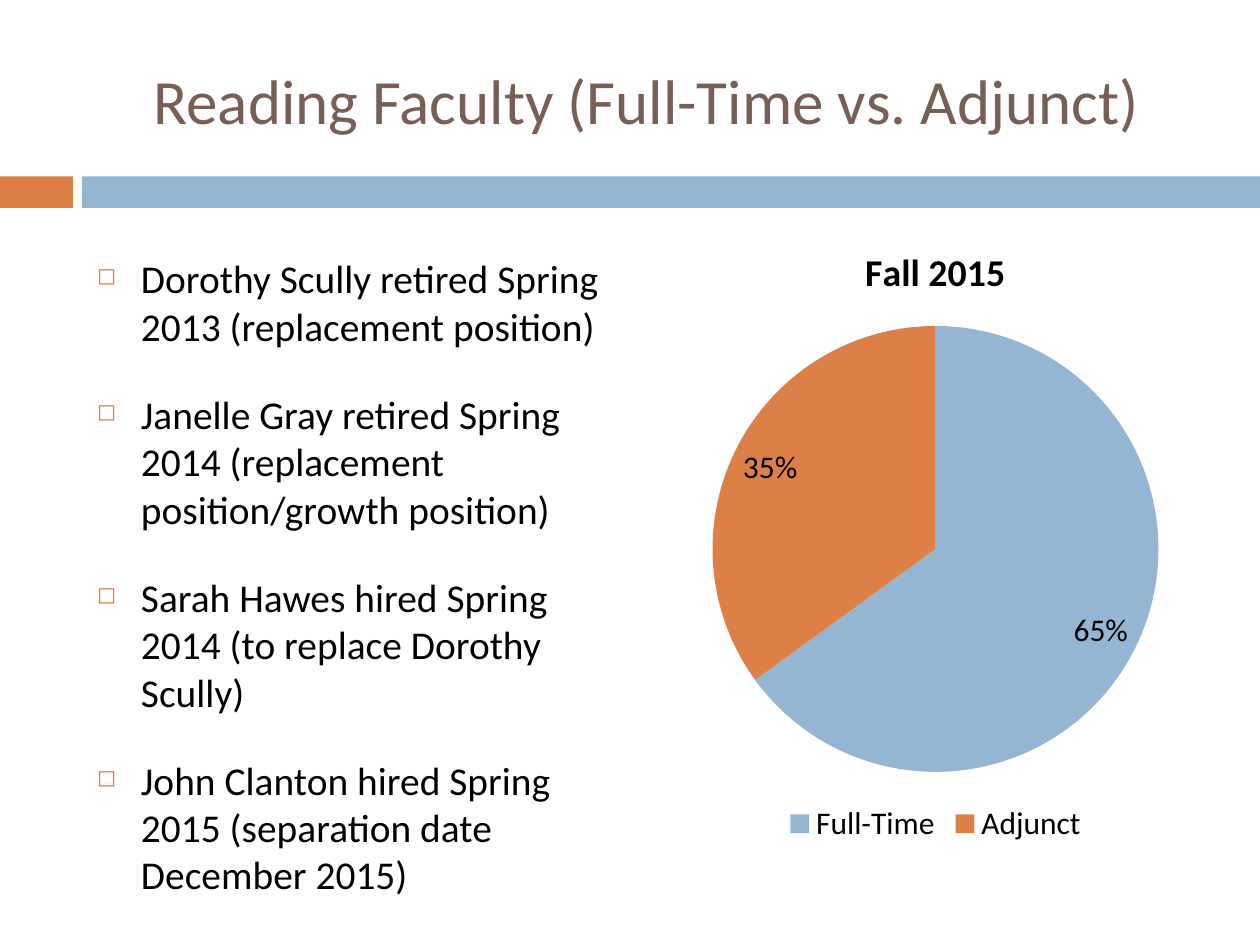
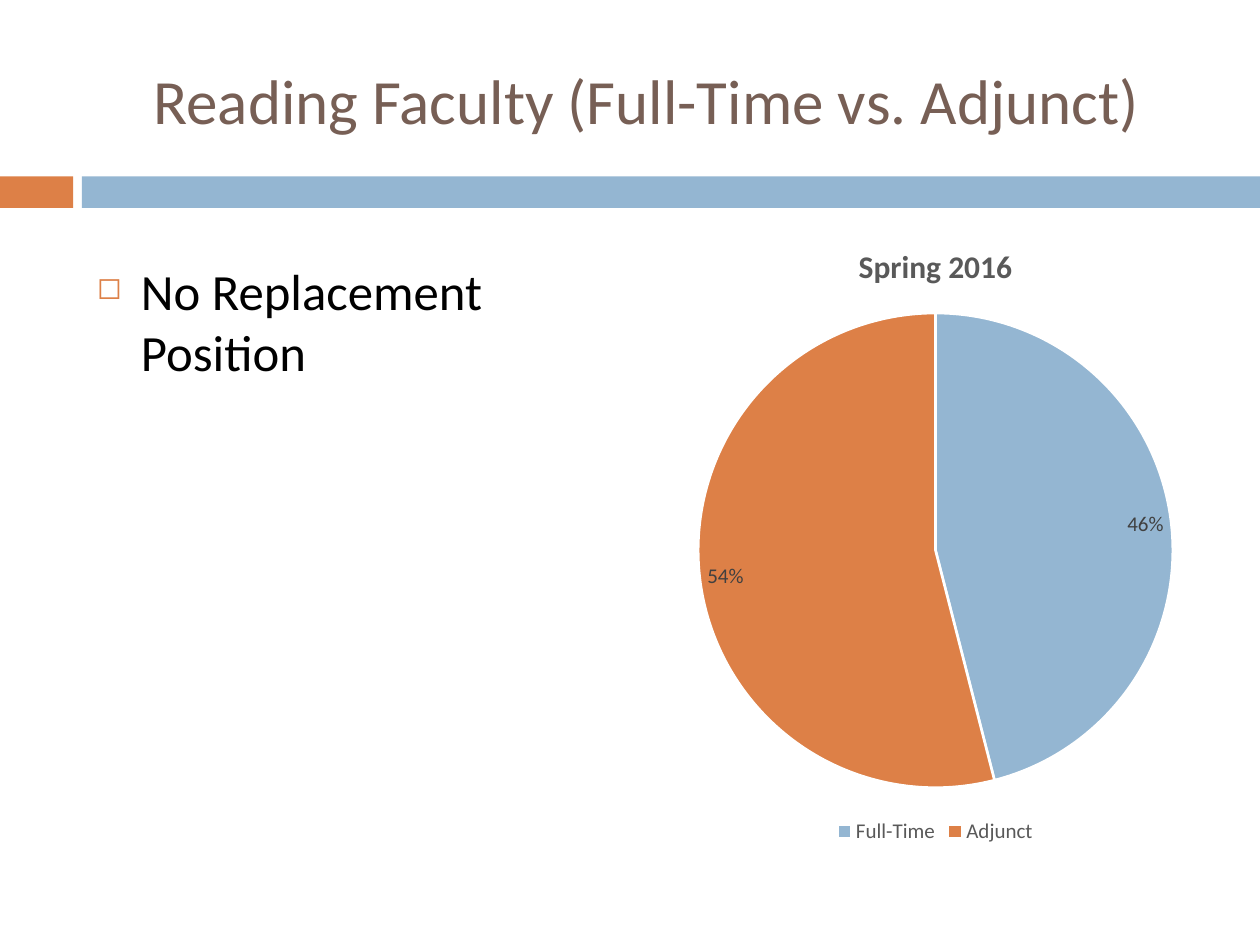
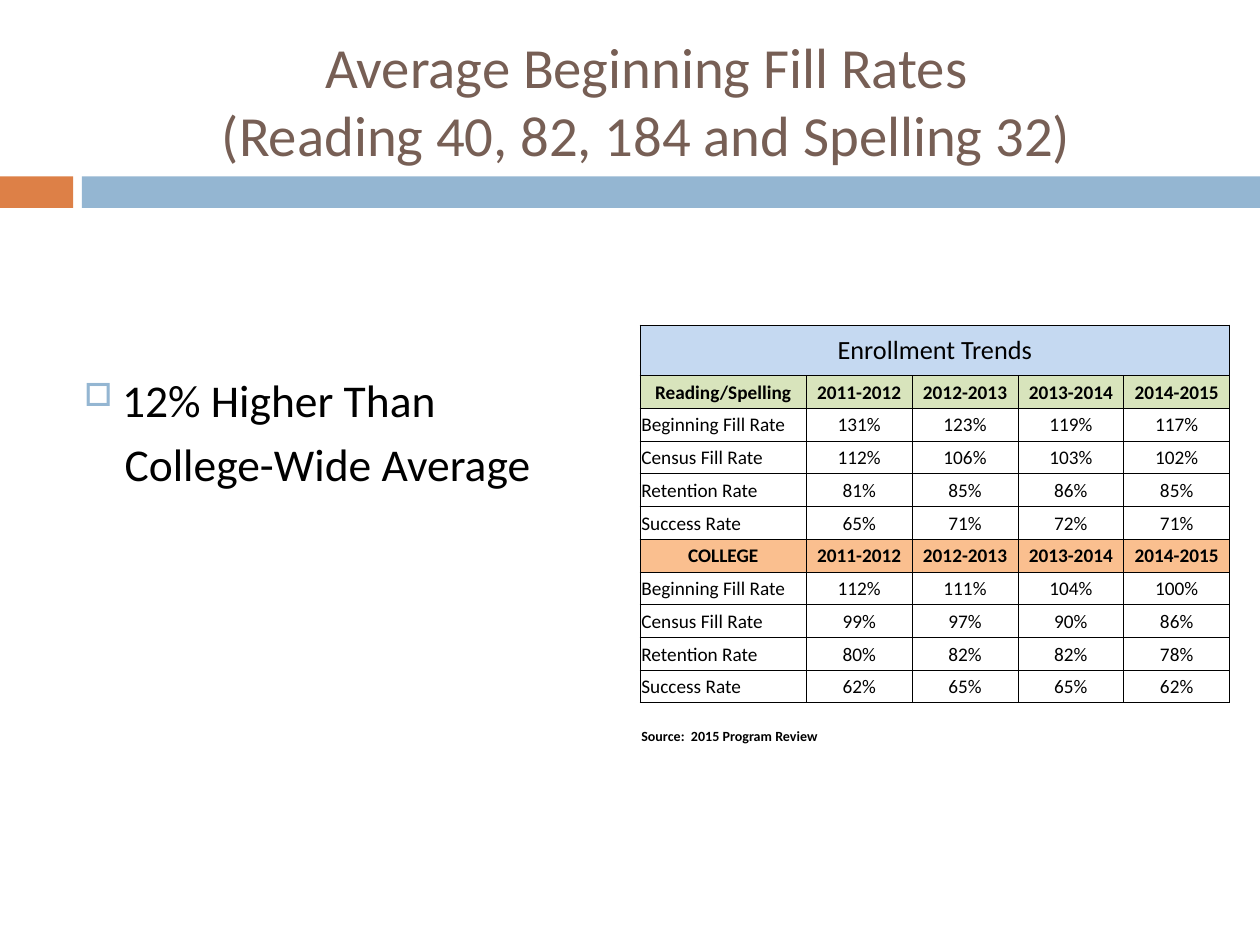
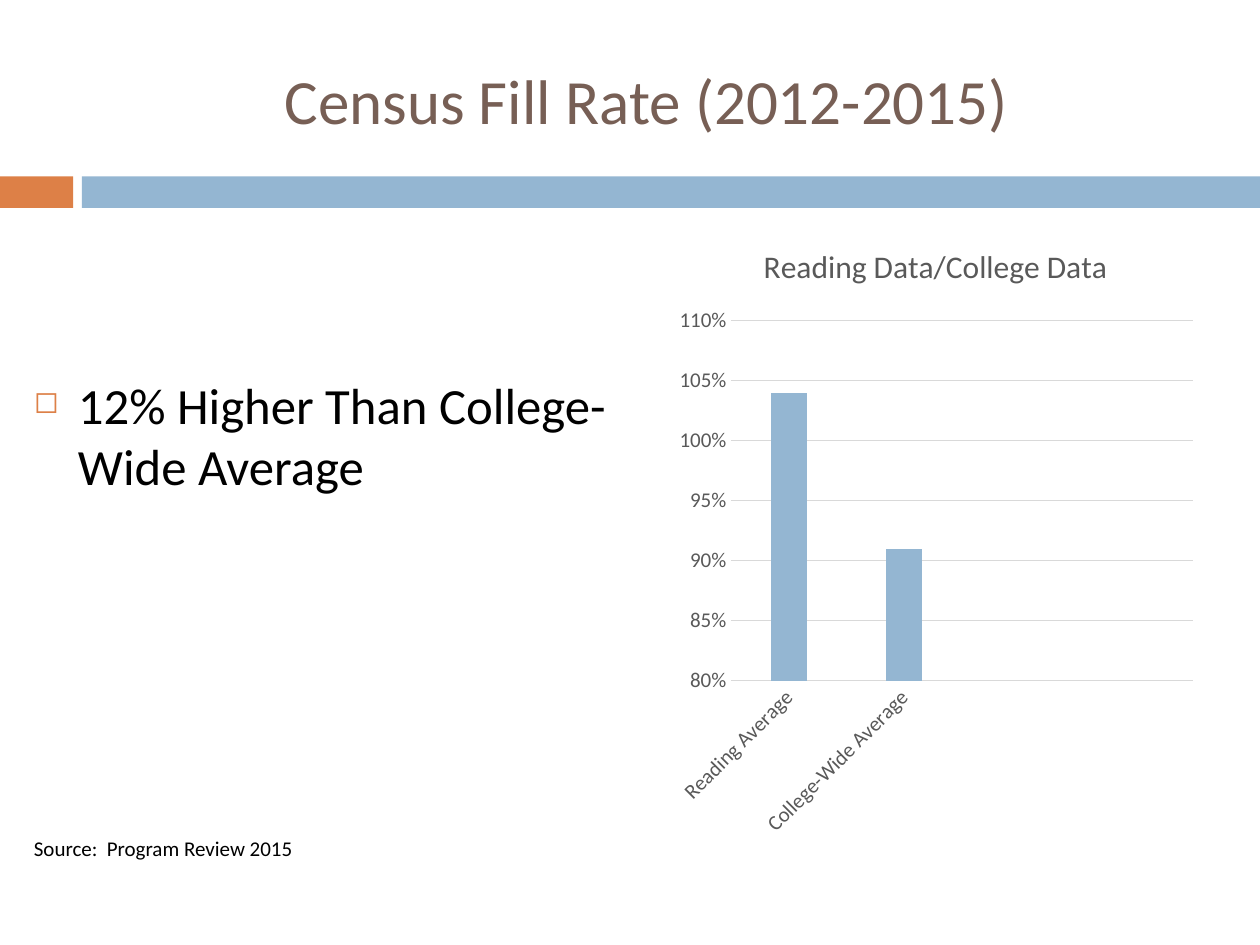
from lxml import etree
from pptx import Presentation, util as u
from pptx.chart.data import CategoryChartData
from pptx.dml.color import RGBColor
from pptx.enum import chart as charts, shapes, text
from pptx.oxml.ns import qn

FONT = "Calibri"
BLACK, WHITE, BROWN = "000000", "FFFFFF", "775F55"
ORANGE, BLUE = "DD8047", "94B6D2"
GREY, DARK_GREY, PALE_GREY = "595959", "404040", "D9D9D9"
SKY, LIME, PEACH = "C5D9F1", "D8E4BC", "FABF8F"

WIDTH, HEIGHT = 10, 7.5
TITLE_BOX = (0.67, 0.25, 8.92, 1.08)
BAND_TOP, BAND_HEIGHT = 1.4, 0.25
BANDS = [(0, 0.58, ORANGE), (0.65, 9.35, BLUE)]  # left, width, colour
BODY_TOP = 1.74
CHART_BOX = (5.3, BODY_TOP, 4.25, 5)
BODY_BOX = (0.67, BODY_TOP, 4.25, 5)
WIDE_BODY_BOX = (0.17, BODY_TOP, 4.75, 5)
TALL_BODY_BOX = (0.17, BODY_TOP, 4.75, 5.34)

# Bullets: sign, colour, size in percent, left margin, first-line indent
SQUARE = ("◻", ORANGE, 60, 0.35, -0.35)
SUB_SQUARE = ("□", BLUE, 70, 0.7, -0.3)
HANGING = (None, None, None, 0.72, 0)
PLAIN = (None, None, None, 0, 0)

FACULTY_TITLE = ["Reading Faculty (Full-Time vs. Adjunct)"]
FACULTY_KINDS = ["Full-Time", "Adjunct"]
STAFF_CHANGES = [
    "Dorothy Scully retired Spring 2013 (replacement position)",
    "Janelle Gray retired Spring 2014 (replacement position/growth position)",
    "Sarah Hawes hired Spring 2014 (to replace Dorothy Scully)",
    "John Clanton hired Spring 2015 (separation date December 2015)",
]
FILL_TITLE = ["Average Beginning Fill Rates",
              "(Reading 40, 82, 184 and Spelling 32)"]
CENSUS_TITLE = ["Census Fill Rate (2012-2015)"]
CENSUS_RATES = {"Reading Average": 1.04, "College-Wide Average": 0.91}
EMPTY_SLOTS = 2

YEARS = ["2011-2012", "2012-2013", "2013-2014", "2014-2015"]
RATES = ["Beginning Fill Rate", "Census Fill Rate", "Retention Rate", "Success Rate"]
TRENDS = [
    ("Reading/Spelling", LIME, [(131, 123, 119, 117), (112, 106, 103, 102),
                                (81, 85, 86, 85), (65, 71, 72, 71)]),
    ("COLLEGE", PEACH, [(112, 111, 104, 100), (99, 97, 90, 86),
                        (80, 82, 82, 78), (62, 65, 65, 62)]),
]


def color(value):
    return RGBColor.from_string(value)


def inches(*lengths):
    return [u.Inches(length) for length in lengths]


def style_font(font, size, shade, bold=False):
    font.name, font.size, font.bold = FONT, u.Pt(size), bold
    font.color.rgb = color(shade)


def add_span(para, words, size, shade=BLACK, bold=False):
    span = para.add_run()
    span.text = words
    style_font(span.font, size, shade, bold)


def add_page(deck, title_lines, size=36):
    """Add a blank page with the two bands and a centred title."""
    page = deck.slides.add_slide(deck.slide_layouts[6])
    for left, width, shade in BANDS:
        band = page.shapes.add_shape(
            shapes.MSO_SHAPE.RECTANGLE, *inches(left, BAND_TOP, width, BAND_HEIGHT))
        band.shadow.inherit = False
        band.fill.solid()
        band.fill.fore_color.rgb = color(shade)
        band.line.fill.background()
    frame = page.shapes.add_textbox(*inches(*TITLE_BOX)).text_frame
    frame.word_wrap = True
    frame.vertical_anchor = text.MSO_ANCHOR.MIDDLE
    para = frame.paragraphs[0]
    para.alignment = text.PP_ALIGN.CENTER
    for number, line in enumerate(title_lines):
        if number:
            para.add_line_break()
        add_span(para, line, size, BROWN)
    return page


def add_body(page, place, lead, items):
    """Add (words, size, space before, bullet) items, lead inches below the top."""
    frame = page.shapes.add_textbox(*inches(*place)).text_frame
    frame.word_wrap = True
    frame.margin_top = u.Inches(lead)
    for number, (words, size, before, bullet) in enumerate(items):
        para = frame.add_paragraph() if number else frame.paragraphs[0]
        para.space_before = u.Pt(before)
        add_span(para, words, size)
        sign, shade, percent, margin, indent = bullet
        props = para._p.get_or_add_pPr()
        props.set("marL", str(u.Inches(margin)))
        props.set("indent", str(u.Inches(indent)))
        if sign:
            holder = etree.SubElement(props, qn("a:buClr"))
            etree.SubElement(holder, qn("a:srgbClr"), val=shade)
            etree.SubElement(props, qn("a:buSzPct"), val=str(percent * 1000))
            etree.SubElement(props, qn("a:buChar"), char=sign)


def add_chart(page, kind, labels, values, title, title_size, title_shade, bold, size):
    data = CategoryChartData(number_format="0%")
    data.categories = labels
    data.add_series("Series 1", values)
    chart = page.shapes.add_chart(kind, *inches(*CHART_BOX), data).chart
    style_font(chart.font, size, BLACK)
    chart.has_title = True
    add_span(chart.chart_title.text_frame.paragraphs[0],
             title, title_size, title_shade, bold)
    chart.chart_title.include_in_layout = False
    chart.has_legend = False
    return chart


def add_pie(page, title, values, title_size, title_shade, size,
            legend_shade, label_shade, outlined):
    chart = add_chart(page, charts.XL_CHART_TYPE.PIE, FACULTY_KINDS, values,
                      title, title_size, title_shade, True, size)
    chart.has_legend = True
    chart.legend.position = charts.XL_LEGEND_POSITION.BOTTOM
    chart.legend.include_in_layout = False
    style_font(chart.legend.font, size, legend_shade)
    plot = chart.plots[0]
    plot.vary_by_categories = True
    for number, shade in enumerate((BLUE, ORANGE)):
        part = plot.series[0].points[number].format
        part.fill.solid()
        part.fill.fore_color.rgb = color(shade)
        if outlined:
            part.line.color.rgb = color(WHITE)
            part.line.width = u.Pt(1.5)
        else:
            part.line.fill.background()
    labels = plot.series[0].data_labels
    labels.show_value = True
    labels.number_format, labels.number_format_is_linked = "0%", False
    labels.position = charts.XL_LABEL_POSITION.BEST_FIT
    style_font(labels.font, size, label_shade)


def add_columns(page):
    labels = list(CENSUS_RATES) + [""] * EMPTY_SLOTS
    values = list(CENSUS_RATES.values()) + [None] * EMPTY_SLOTS
    chart = add_chart(page, charts.XL_CHART_TYPE.COLUMN_CLUSTERED, labels, values,
                      "Reading Data/College Data", 18, GREY, False, 10)
    plot = chart.plots[0]
    plot.gap_width, plot.overlap, plot.vary_by_categories = 219, -27, False
    fill = plot.series[0].format.fill
    fill.solid()
    fill.fore_color.rgb = color(BLUE)
    names, scale = chart.category_axis, chart.value_axis
    for axis in (names, scale):
        axis.major_tick_mark = axis.minor_tick_mark = charts.XL_TICK_MARK.NONE
        style_font(axis.tick_labels.font, 12, GREY)
    scale.minimum_scale, scale.maximum_scale, scale.major_unit = 0.8, 1.1, 0.05
    scale.tick_labels.number_format = "0%"
    scale.tick_labels.number_format_is_linked = False
    scale.format.line.fill.background()
    for line in (names.format.line, scale.major_gridlines.format.line):
        line.color.rgb = color(PALE_GREY)
        line.width = u.Pt(0.75)
    turned = names._element.find(qn("c:txPr")).find(qn("a:bodyPr"))
    turned.set("rot", str(-45 * 60000))
    turned.set("vert", "horz")


def set_borders(cell, drawn):
    """Draw the sides named in drawn (of L, R, T, B) and clear the others."""
    props = cell._tc.get_or_add_tcPr()
    for number, side in enumerate("LRTB"):
        line = etree.Element(qn(f"a:ln{side}"), w=str(u.Pt(0.5)))
        if side in drawn:
            fill = etree.SubElement(line, qn("a:solidFill"))
            etree.SubElement(fill, qn("a:srgbClr"), val=BLACK)
        else:
            etree.SubElement(line, qn("a:noFill"))
        props.insert(number, line)


def add_trends(page):
    # Each row: cell texts, fill, size, bold
    rows = [(["Enrollment Trends"], SKY, 15, False)]
    for group, shade, figures in TRENDS:
        rows.append(([group] + YEARS, shade, 11, True))
        for rate, shares in zip(RATES, figures):
            rows.append(([rate] + [f"{share}%" for share in shares], None, 11, False))
    rows.append((["Source:  2015 Program Review"], None, 8, True))
    widths = [1.32] + [0.84] * len(YEARS)
    heights = [0.4] + [0.26] * (len(rows) - 2) + [0.34]
    table = page.shapes.add_table(
        len(rows), len(widths),
        *inches(5.08, 2.58, sum(widths), sum(heights))).table
    table.first_row = table.horz_banding = False
    for column, width in zip(table.columns, widths):
        column.width = u.Inches(width)
    last = len(rows) - 1
    for number, (texts, shade, size, bold) in enumerate(rows):
        table.rows[number].height = u.Inches(heights[number])
        for place, cell in enumerate(table.rows[number].cells):
            cell.margin_left = cell.margin_right = cell.margin_top = u.Inches(0.01)
            cell.margin_bottom = 0
            cell.vertical_anchor = (text.MSO_ANCHOR.BOTTOM if number == last
                                    else text.MSO_ANCHOR.MIDDLE)
            if shade:
                cell.fill.solid()
                cell.fill.fore_color.rgb = color(shade)
            else:
                cell.fill.background()
            set_borders(cell, "T" if number == last else "LRTB")
            if place < len(texts):
                para = cell.text_frame.paragraphs[0]
                if place or shade:
                    para.alignment = text.PP_ALIGN.CENTER
                add_span(para, texts[place], size, BLACK, bold)
    table.cell(0, 0).merge(table.cell(0, len(widths) - 1))
    table.cell(last, 0).merge(table.cell(last, 1))


def main():
    deck = Presentation()
    deck.slide_width, deck.slide_height = inches(WIDTH, HEIGHT)

    page = add_page(deck, FACULTY_TITLE)
    add_body(page, BODY_BOX, 0.28,
             [(change, 22.5, 23.5 if number else 0, SQUARE)
              for number, change in enumerate(STAFF_CHANGES)])
    add_pie(page, "Fall 2015", [0.65, 0.35], 21.6, BLACK, 18, BLACK, BLACK, False)

    page = add_page(deck, FACULTY_TITLE)
    add_body(page, BODY_BOX, 0.32, [("No Replacement Position", 29, 0, SQUARE)])
    add_pie(page, "Spring 2016", [0.46, 0.54], 18, GREY, 12, GREY, DARK_GREY, True)

    page = add_page(deck, FILL_TITLE, 32.4)
    add_body(page, WIDE_BODY_BOX, 1.21,
             [("12% Higher Than", 26, 0, SUB_SQUARE),
              ("College-Wide Average", 26, 5.5, HANGING)])
    add_trends(page)

    page = add_page(deck, CENSUS_TITLE)
    add_body(page, TALL_BODY_BOX, 1.23,
             [("12% Higher Than College-Wide Average", 29, 0, SQUARE),
              ("Source:  Program Review 2015", 12, 194, PLAIN)])
    add_columns(page)

    deck.save("out.pptx")


if __name__ == "__main__":
    main()
